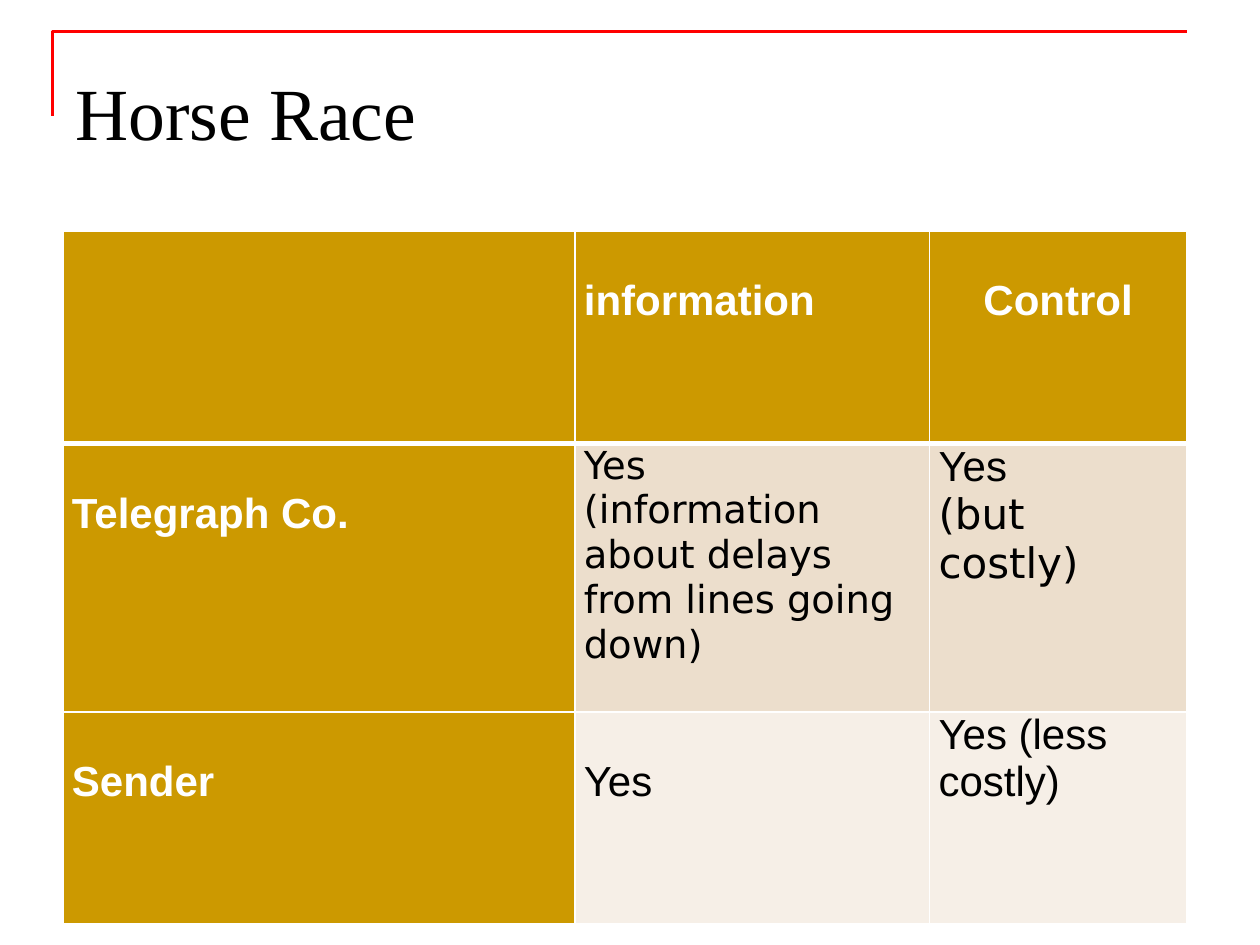
import pptx
import pptx.util
import pptx.dml.color
import pptx.enum.text
import pptx.oxml
import pptx.oxml.ns
from pptx.util import Cm

GOLD, TAN, CREAM = "CC9900", "ECDECC", "F6EFE7"
WHITE, BLACK, RED = "FFFFFF", "000000", "FF0000"
SANS, SERIF, WIDE = "Arial", "Times New Roman", "DejaVu Sans"


def tint(code):
    return pptx.dml.color.RGBColor.from_string(code)


class Deck:
    def __init__(self):
        self.file = pptx.Presentation()
        self.file.slide_width, self.file.slide_height = Cm(25.4), Cm(19.05)
        self.slide = self.file.slides.add_slide(self.file.slide_layouts[6])

    def run(self, para, text, size, face, color, bold=False):
        run = para.add_run()
        run.text = text
        font = run.font
        font.size, font.name, font.bold = pptx.util.Pt(size), face, bold
        font.color.rgb = tint(color)

    def frame(self, points, color, width):
        """Draw an open line through points given in cm."""
        spots = [(Cm(x), Cm(y)) for x, y in points]
        pen = self.slide.shapes.build_freeform(*spots[0])
        pen.add_line_segments(spots[1:], close=False)
        shape = pen.convert_to_shape()
        shape.shadow.inherit = False
        shape.fill.background()
        shape.line.color.rgb = tint(color)
        shape.line.width = pptx.util.Pt(width)

    def title(self, text, left, top, width, height):
        box = self.slide.shapes.add_textbox(Cm(left), Cm(top), Cm(width), Cm(height))
        body = box.text_frame
        body.word_wrap = True
        body.margin_top = Cm(0.3)
        self.run(body.paragraphs[0], text, 42, SERIF, BLACK)

    def edge(self, cell, side, width):
        line = pptx.oxml.parse_xml(
            f'<a:ln{side} {pptx.oxml.ns.nsdecls("a")} w="{pptx.util.Pt(width)}">'
            f'<a:solidFill><a:srgbClr val="{WHITE}"/></a:solidFill></a:ln{side}>')
        cell._tc.get_or_add_tcPr().append(line)

    def cell(self, cell, fill, paras, widths, center=False, space=None):
        for side, width in zip("LRTB", widths):
            self.edge(cell, side, width)
        cell.fill.solid()
        cell.fill.fore_color.rgb = tint(fill)
        cell.margin_left = cell.margin_right = Cm(0.18)
        cell.margin_top = cell.margin_bottom = 0
        body = cell.text_frame
        for i, style in enumerate(paras):
            para = body.add_paragraph() if i else body.paragraphs[0]
            if space:
                para.line_spacing = space
            if center:
                para.alignment = pptx.enum.text.PP_ALIGN.CENTER
            self.run(para, *style)

    def table(self, left, top, cols, rows, data):
        grid = self.slide.shapes.add_table(
            len(rows), len(cols), Cm(left), Cm(top), Cm(sum(cols)), Cm(sum(rows))).table
        for col, width in zip(grid.columns, cols):
            col.width = Cm(width)
        for row, height in zip(grid.rows, rows):
            row.height = Cm(height)
        for r, line in enumerate(data):
            # The rule under the header row is thicker
            widths = (1, 1, 3 if r == 1 else 1, 3 if r == 0 else 1)
            for c, (fill, paras, extra) in enumerate(line):
                self.cell(grid.cell(r, c), fill, paras, widths, **extra)


def head(text, **extra):
    return GOLD, [(text, 24, SANS, WHITE, True)], {"space": 2.0, **extra}


def main():
    deck = Deck()

    # Corner line and title
    deck.frame([(1.06, 2.33), (1.06, 0.64), (23.92, 0.64)], RED, 1.5)
    deck.title("Horse Race", 1.27, 1.06, 22.86, 3.18)

    # Who has information and control
    deck.table(1.27, 4.66, [10.32, 7.15, 5.18], [4.28, 5.41, 4.28], [
        [(GOLD, [], {}), head("information"), head("Control", center=True)],
        [head("Telegraph Co."),
         (TAN, [("Yes", 22, WIDE, BLACK),
                ("(information about delays from lines going down)", 22, WIDE, BLACK)], {}),
         (TAN, [("Yes", 24, SANS, BLACK), ("(but costly)", 24, WIDE, BLACK)], {})],
        [head("Sender"),
         (CREAM, [("Yes", 24, SANS, BLACK)], {"space": 2.0}),
         (CREAM, [("Yes (less costly)", 24, SANS, BLACK)], {})],
    ])

    deck.file.save("out.pptx")


if __name__ == "__main__":
    main()
